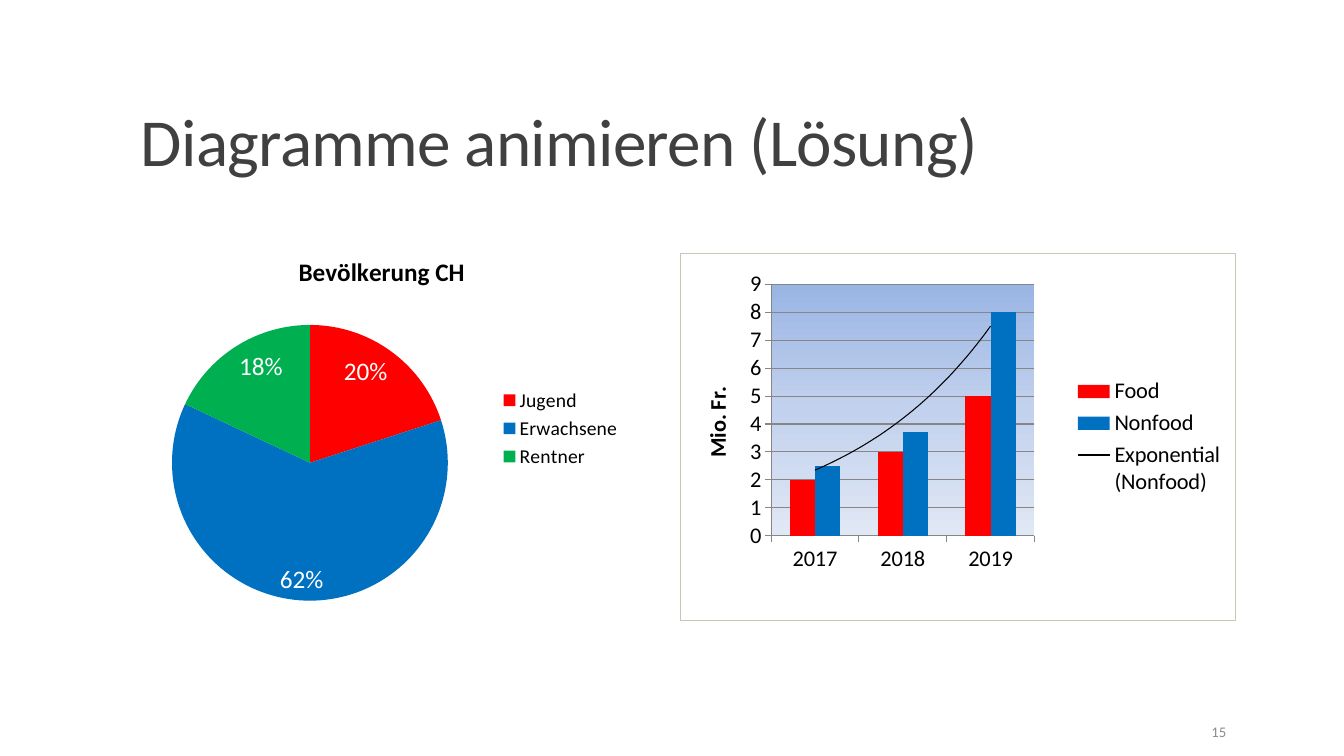
from pptx import Presentation
from pptx.chart.data import CategoryChartData
from pptx.dml.color import RGBColor
from pptx.enum.chart import (XL_CHART_TYPE, XL_LABEL_POSITION,
                             XL_LEGEND_POSITION, XL_TICK_MARK)
from pptx.enum.text import MSO_ANCHOR, PP_ALIGN
from pptx.oxml import parse_xml
from pptx.oxml.ns import nsdecls
from pptx.util import Inches, Pt

FONT = "Calibri"
RED, BLUE, GREEN, GREY = "FF0000", "0070C0", "00B050", "868686"


def color(code):
    return RGBColor.from_string(code)


def style(font, size, code="000000", bold=False):
    font.name, font.size, font.bold = FONT, Pt(size), bold
    font.color.rgb = color(code)


def paint(fill, code):
    fill.solid()
    fill.fore_color.rgb = color(code)


def add_text(slide, box, text, size=18, code="000000", anchor=MSO_ANCHOR.TOP,
             align=PP_ALIGN.LEFT, lines=1.0, track=0):
    frame = slide.shapes.add_textbox(*map(Inches, box)).text_frame
    frame.word_wrap, frame.vertical_anchor = True, anchor
    para = frame.paragraphs[0]
    para.alignment, para.line_spacing = align, lines
    run = para.add_run()
    run.text = text
    style(run.font, size, code)
    run.font._element.set("spc", str(int(track * 100)))


def add_chart(slide, box, kind, cats, rows, size, key_size, plot):
    data = CategoryChartData()
    data.categories = cats
    for name, vals in rows.items():
        data.add_series(name, vals)
    chart = slide.shapes.add_chart(kind, *map(Inches, box), data).chart
    style(chart.font, size)
    chart.has_title = False
    chart.has_legend = True
    chart.legend.position = XL_LEGEND_POSITION.RIGHT
    chart.legend.include_in_layout = False
    style(chart.legend.font, key_size)

    # Fixed inner plot area, as fractions of the chart
    area = chart.element.chart.plotArea
    for old in area.xpath("c:layout"):
        area.remove(old)
    spots = "".join(f'<c:{tag} val="{val}"/>' for tag, val in zip("xywh", plot))
    area.insert(0, parse_xml(
        f'<c:layout {nsdecls("c")}><c:manualLayout><c:layoutTarget val="inner"/>'
        f'<c:xMode val="edge"/><c:yMode val="edge"/>{spots}'
        '</c:manualLayout></c:layout>'))
    return chart


def set_title(owner, frame, text, size):
    run = frame.paragraphs[0].add_run()
    run.text = text
    style(run.font, size, bold=True)


def add_pie(slide, box):
    chart = add_chart(slide, box, XL_CHART_TYPE.PIE,
                      ["Jugend", "Erwachsene", "Rentner"],
                      {"Series 1": (20, 62, 18)}, 18, 14,
                      (0.08, 0.23, 0.554, 0.72))
    chart.has_title = True
    set_title(chart, chart.chart_title.text_frame, "Bevölkerung CH", 18)
    pie = chart.plots[0]
    pie.vary_by_categories = True
    for i, code in enumerate((RED, BLUE, GREEN)):
        paint(pie.series[0].points[i].format.fill, code)

    # Percent labels
    pie.has_data_labels = True
    labels = pie.data_labels
    labels.show_value, labels.show_percentage = False, True
    labels.number_format, labels.number_format_is_linked = "0%", False
    labels.position = XL_LABEL_POSITION.INSIDE_END
    style(labels.font, 18, "FFFFFF")


def add_sales(slide, box):
    chart = add_chart(slide, box, XL_CHART_TYPE.COLUMN_CLUSTERED,
                      ["2017", "2018", "2019"],
                      {"Food": (2, 3, 5), "Nonfood": (2.5, 3.7, 8)}, 16, 16,
                      (0.164, 0.085, 0.474, 0.684))
    bars = chart.plots[0]
    bars.vary_by_categories = False
    bars.gap_width, bars.overlap = 150, 0
    for series, code in zip(bars.series, (RED, BLUE)):
        paint(series.format.fill, code)

    # Axes
    scale = chart.value_axis
    scale.minimum_scale, scale.maximum_scale, scale.major_unit = 0, 9, 1
    scale.has_major_gridlines = True
    set_title(scale, scale.axis_title.text_frame, "Mio. Fr.", 16)
    for axis in (scale, chart.category_axis):
        axis.major_tick_mark = XL_TICK_MARK.OUTSIDE
        axis.format.line.color.rgb = color(GREY)
        style(axis.tick_labels.font, 16)
    scale.major_gridlines.format.line.color.rgb = color(GREY)

    # Exponential trend line of the second series
    cat = bars.series[1]._element.xpath("c:cat")[0]
    cat.addprevious(parse_xml(
        f'<c:trendline {nsdecls("c", "a")}><c:name>Exponential (Nonfood)</c:name>'
        '<c:spPr><a:ln w="9525"><a:solidFill><a:srgbClr val="000000"/>'
        '</a:solidFill></a:ln></c:spPr><c:trendlineType val="exp"/>'
        '<c:dispRSqr val="0"/><c:dispEq val="0"/></c:trendline>'))

    # Gradient behind the columns and thin frame around the chart
    stops = "".join(f'<a:gs pos="{pos * 1000}"><a:srgbClr val="{code}"/></a:gs>'
                    for pos, code in ((0, "9AB5E4"), (50, "C2D1ED"), (100, "E1E8F5")))
    chart.element.chart.plotArea.append(parse_xml(
        f'<c:spPr {nsdecls("c", "a")}><a:gradFill><a:gsLst>{stops}</a:gsLst>'
        '<a:lin ang="5400000" scaled="0"/></a:gradFill></c:spPr>'))
    chart.element.chart.addnext(parse_xml(
        f'<c:spPr {nsdecls("c", "a")}><a:noFill/><a:ln w="6350"><a:solidFill>'
        '<a:srgbClr val="C1CAB6"/></a:solidFill></a:ln></c:spPr>'))


def main():
    deck = Presentation()
    deck.slide_width, deck.slide_height = Inches(13.33), Inches(7.5)
    slide = deck.slides.add_slide(deck.slide_layouts[6])
    add_text(slide, (1.3, 0.59, 10.96, 1.25), "Diagramme animieren (Lösung)",
             size=48, code="404040", anchor=MSO_ANCHOR.BOTTOM, lines=0.85, track=-0.5)
    add_pie(slide, (1.3, 2.35, 4.97, 3.8))
    add_text(slide, (10.83, 7.06, 1.43, 0.4), "15", size=10.5, code="8C8C8C",
             anchor=MSO_ANCHOR.MIDDLE, align=PP_ALIGN.RIGHT)
    add_sales(slide, (6.74, 2.51, 5.52, 3.65))
    deck.save("out.pptx")


if __name__ == "__main__":
    main()
